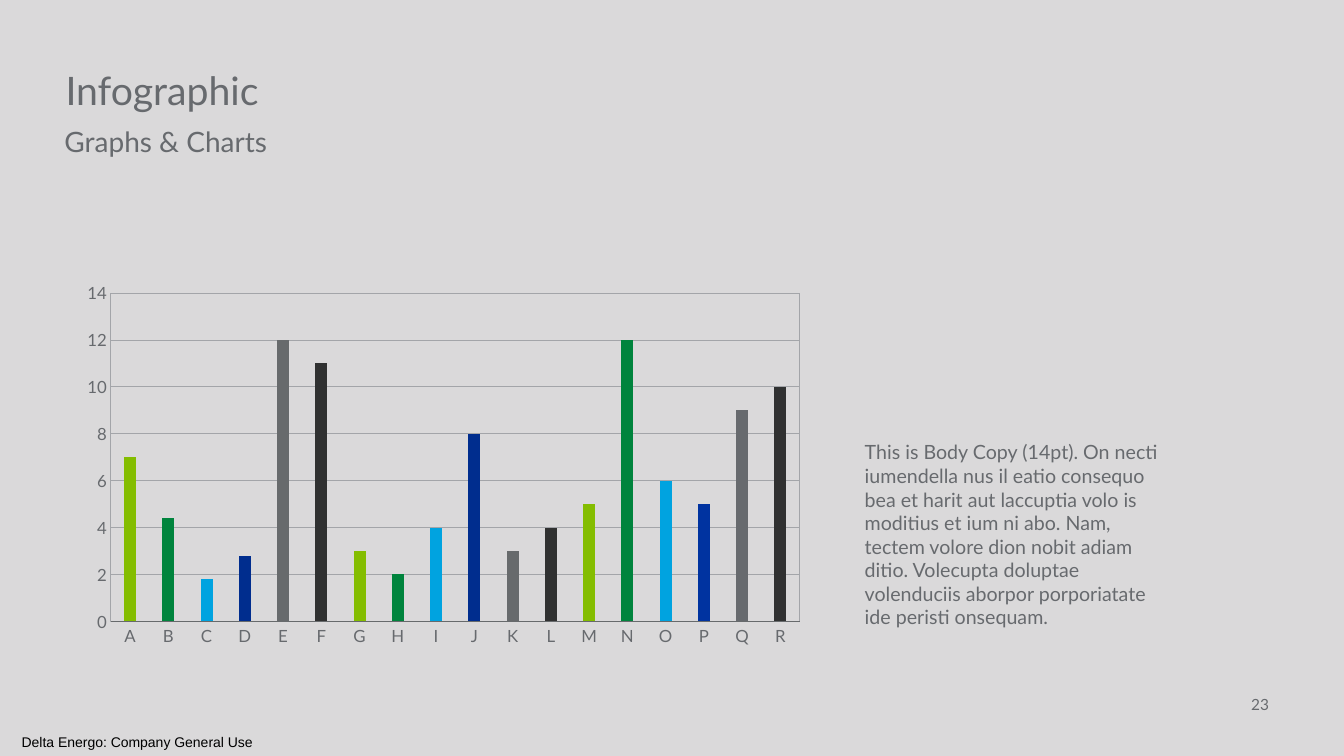
from dataclasses import dataclass
from itertools import cycle

import lxml.etree
import pptx
import pptx.chart.data
import pptx.dml.color
import pptx.enum.chart
import pptx.enum.text
import pptx.oxml
import pptx.oxml.ns
import pptx.slide
import pptx.util

Pt = pptx.util.Pt
RGBColor = pptx.dml.color.RGBColor
PP_ALIGN = pptx.enum.text.PP_ALIGN
MSO_ANCHOR = pptx.enum.text.MSO_ANCHOR

BACKGROUND = RGBColor(0xDA, 0xD9, 0xDA)
TEXT_GREY = RGBColor(0x67, 0x6A, 0x6E)
BLACK = RGBColor(0x00, 0x00, 0x00)
GRID_GREY = RGBColor(0xA3, 0xA5, 0xA9)
LIME = RGBColor(0x84, 0xBD, 0x00)
GREEN = RGBColor(0x00, 0x84, 0x3D)
SKY = RGBColor(0x00, 0xA3, 0xE0)
NAVY = RGBColor(0x00, 0x2D, 0x8E)
ROYAL = RGBColor(0x00, 0x33, 0xA0)
SLATE = RGBColor(0x67, 0x6A, 0x6C)
CHARCOAL = RGBColor(0x30, 0x31, 0x31)

FONT = "Lato"
BAR_COLORS = (LIME, GREEN, SKY, NAVY, SLATE, CHARCOAL)
BAR_EXCEPTIONS = {"P": ROYAL, "Q": TEXT_GREY}
CATEGORIES = "ABCDEFGHIJKLMNOPQR"
VALUES = (7, 4.4, 1.8, 2.8, 12, 11, 3, 2, 4, 8, 3, 4, 5, 12, 6, 5, 9, 10)
PLOT_LAYOUT = {"x": 0.065, "y": 0.183, "w": 0.905, "h": 0.737}


@dataclass(frozen=True)
class Copy:
    text: str
    left: float
    top: float
    width: float
    height: float
    size: float
    font: str = FONT
    color: RGBColor = TEXT_GREY
    side_inset: float = 0
    top_inset: float = 3.6
    align: PP_ALIGN = PP_ALIGN.LEFT
    anchor: MSO_ANCHOR = MSO_ANCHOR.TOP


COPIES = (
    Copy("23", 878.4, 493.9, 28.1, 18, 11,
         align=PP_ALIGN.RIGHT, anchor=MSO_ANCHOR.MIDDLE),
    Copy("Delta Energo: Company General Use", 0, 520.6, 195.8, 19.4, 10,
         font="Arial", color=BLACK, align=PP_ALIGN.CENTER,
         anchor=MSO_ANCHOR.MIDDLE),
    Copy("Infographic", 46.8, 43.9, 356.4, 41, 28),
    Copy("Graphs & Charts", 38.9, 85.7, 356.4, 41, 20, side_inset=7.2),
    Copy("This is Body Copy (14pt). On necti iumendella nus il eatio consequo "
         "bea et harit aut laccuptia volo is moditius et ium ni abo. Nam, "
         "tectem volore dion nobit adiam ditio. Volecupta doluptae "
         "volenduciis aborpor porporiatate ide peristi onsequam.",
         610.6, 300.2, 227.5, 234.7, 14, side_inset=7.2, top_inset=14.4),
)


def add_copy(slide: pptx.slide.Slide, copy: Copy) -> None:
    box = slide.shapes.add_textbox(
        Pt(copy.left), Pt(copy.top), Pt(copy.width), Pt(copy.height))
    frame = box.text_frame
    frame.word_wrap = True
    frame.vertical_anchor = copy.anchor
    frame.margin_left = frame.margin_right = Pt(copy.side_inset)
    frame.margin_top = Pt(copy.top_inset)
    frame.margin_bottom = Pt(3.6)
    paragraph = frame.paragraphs[0]
    paragraph.text = copy.text
    paragraph.alignment = copy.align
    paragraph.font.name = copy.font
    paragraph.font.size = Pt(copy.size)
    paragraph.font.color.rgb = copy.color


def style_plot_area(plot_area: lxml.etree._Element) -> None:
    qn = pptx.oxml.ns.qn
    for old_layout in plot_area.findall(qn("c:layout")):
        plot_area.remove(old_layout)
    layout = lxml.etree.Element(qn("c:layout"))
    manual = lxml.etree.SubElement(layout, qn("c:manualLayout"))
    settings = {"layoutTarget": "inner", "xMode": "edge", "yMode": "edge",
                **PLOT_LAYOUT}
    for tag, value in settings.items():
        lxml.etree.SubElement(manual, qn(f"c:{tag}"), val=str(value))
    plot_area.insert(0, layout)
    plot_area.append(pptx.oxml.parse_xml(
        f'<c:spPr {pptx.oxml.ns.nsdecls("c", "a")}><a:noFill/>'
        f'<a:ln w="{Pt(0.75)}"><a:solidFill><a:srgbClr val="{GRID_GREY}"/>'
        '</a:solidFill></a:ln></c:spPr>'))


def add_bar_chart(slide: pptx.slide.Slide) -> None:
    data = pptx.chart.data.CategoryChartData()
    data.categories = list(CATEGORIES)
    data.add_series("Series 1", VALUES)
    chart = slide.shapes.add_chart(
        pptx.enum.chart.XL_CHART_TYPE.COLUMN_CLUSTERED,
        Pt(43.9), Pt(151.2), Pt(543.6), Pt(318.2), data).chart
    chart.has_title = False
    chart.has_legend = False
    chart.font.name = FONT
    chart.font.size = Pt(10)
    chart.font.color.rgb = TEXT_GREY

    category_axis, value_axis = chart.category_axis, chart.value_axis
    for axis in (category_axis, value_axis):
        axis.major_tick_mark = pptx.enum.chart.XL_TICK_MARK.NONE
        axis.minor_tick_mark = pptx.enum.chart.XL_TICK_MARK.NONE
        axis.tick_labels.font.name = FONT
        axis.tick_labels.font.size = Pt(12)
        axis.tick_labels.font.color.rgb = TEXT_GREY
    category_axis.format.line.color.rgb = SLATE
    category_axis.format.line.width = Pt(0.75)
    value_axis.format.line.fill.background()
    value_axis.minimum_scale = 0
    value_axis.maximum_scale = 14
    value_axis.major_unit = 2
    value_axis.has_major_gridlines = True
    value_axis.major_gridlines.format.line.color.rgb = GRID_GREY
    value_axis.major_gridlines.format.line.width = Pt(0.75)

    plot = chart.plots[0]
    plot.gap_width = 219
    plot.overlap = -27
    plot.vary_by_categories = False
    series = plot.series[0]
    series.format.fill.solid()
    series.format.fill.fore_color.rgb = NAVY
    for index, (category, color) in enumerate(zip(CATEGORIES, cycle(BAR_COLORS))):
        fill = series.points[index].format.fill
        fill.solid()
        fill.fore_color.rgb = BAR_EXCEPTIONS.get(category, color)
    style_plot_area(chart.element.chart.plotArea)


def main() -> None:
    presentation = pptx.Presentation()
    presentation.slide_width = Pt(960)
    presentation.slide_height = Pt(540)
    slide = presentation.slides.add_slide(presentation.slide_layouts[6])
    slide.background.fill.solid()
    slide.background.fill.fore_color.rgb = BACKGROUND
    for copy in COPIES:
        add_copy(slide, copy)
    add_bar_chart(slide)
    presentation.save("out.pptx")


if __name__ == "__main__":
    main()
